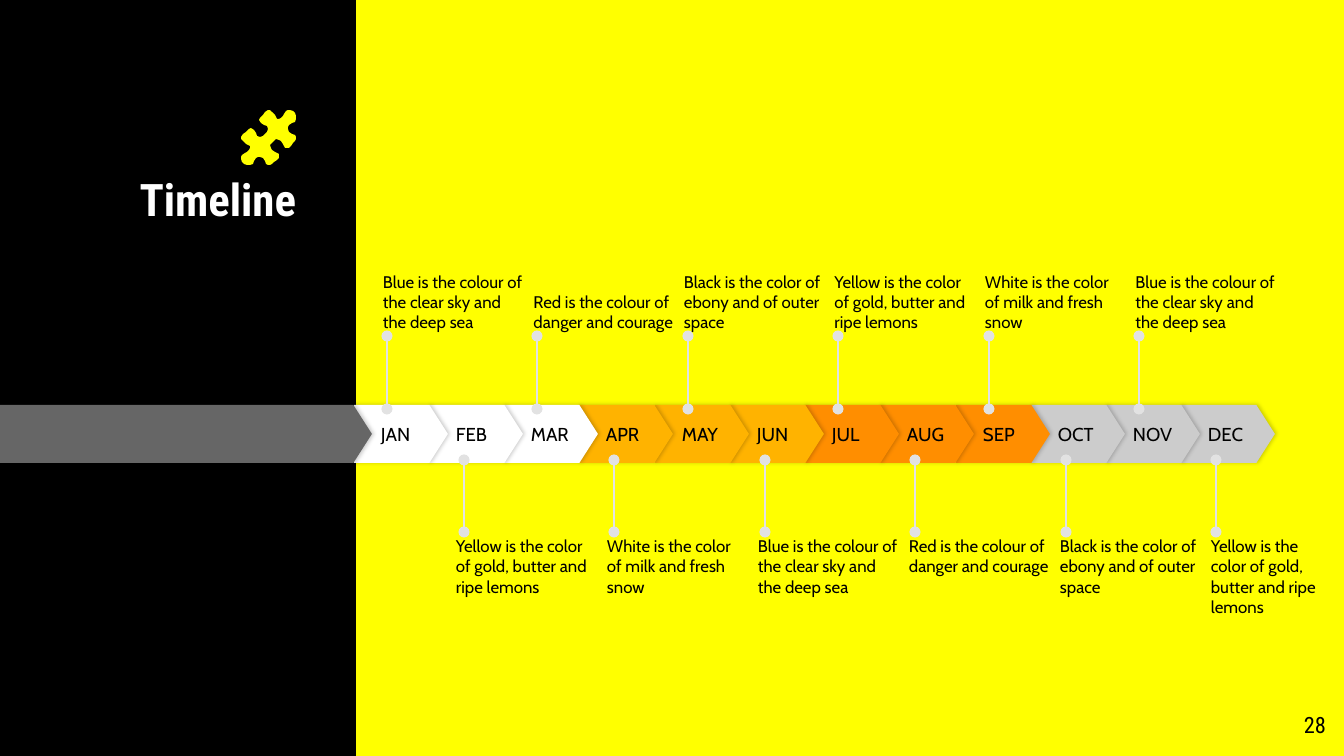
from lxml import etree
from pptx import Presentation
from pptx.dml.color import RGBColor
from pptx.enum.shapes import MSO_CONNECTOR, MSO_SHAPE
from pptx.enum.text import MSO_ANCHOR, PP_ALIGN
from pptx.oxml.ns import qn
from pptx.util import Pt

RECT, PLATE = MSO_SHAPE.RECTANGLE, MSO_SHAPE.PENTAGON
LINE = MSO_CONNECTOR.STRAIGHT
TOP, MID, LOW = MSO_ANCHOR.TOP, MSO_ANCHOR.MIDDLE, MSO_ANCHOR.BOTTOM
LEFT, RIGHT = PP_ALIGN.LEFT, PP_ALIGN.RIGHT
PX = 914400 / 134.4

THEME = {
    "back": "FFFF00", "side": "000000", "bar": "666666", "pin": "E2E2E2",
    "ink": "000000", "title": "FFFFFF",
    "terms": ["FFFFFF", "FFB300", "FF8E00", "CCCCCC"],
    "head": "Roboto Condensed", "body": "Cabin",
    "big": 24, "page": 12, "month": 10, "note": 9,
}


def px(*nums):
    return [round(n * PX) for n in nums]


def write(shape, text, size, font, ink=THEME["ink"], pad=(0, 0), anchor=TOP, align=LEFT):
    frame = shape.text_frame
    frame.text = text
    frame.word_wrap = True
    frame.vertical_anchor = anchor
    frame.margin_left, frame.margin_top = px(*pad)
    frame.margin_right = frame.margin_bottom = px(pad[1])[0]
    para = frame.paragraphs[0]
    para.alignment = align
    face = para.runs[0].font
    face.size, face.name = Pt(size), font
    face.color.rgb = RGBColor.from_string(ink)
    return para


deck = Presentation()
deck.slide_width, deck.slide_height = px(1344, 756)
slide = deck.slides.add_slide(deck.slide_layouts[6])
shapes = slide.shapes

# Background and side panel
slide.background.fill.solid()
slide.background.fill.fore_color.rgb = RGBColor.from_string(THEME["back"])
side = shapes.add_shape(RECT, *px(0, 0, 356, 756))
side.shadow.inherit = False
side.fill.solid()
side.fill.fore_color.rgb = RGBColor.from_string(THEME["side"])
side.line.fill.background()

# Title and page number
title = shapes.add_textbox(*px(59, 165, 250, 218))
para = write(title, "Timeline", THEME["big"], THEME["head"], THEME["title"], (13, 13), align=RIGHT)
para.line_spacing = 0.9
para.runs[0].font.bold = True
page = shapes.add_textbox(*px(1258, 698, 81, 58))
write(page, "28", THEME["page"], THEME["head"], pad=(13, 13), align=RIGHT)

# Month arrows, last one at the back, then the lead-in bar
months = ["JAN", "FEB", "MAR", "APR", "MAY", "JUN",
          "JUL", "AUG", "SEP", "OCT", "NOV", "DEC"]
plates = [(354 + 301 * i // 4, 94, THEME["terms"][i // 3], month)
          for i, month in enumerate(months)]
plates.insert(0, (0, 372, THEME["bar"], ""))
plates = plates[:0:-1] + plates[:1]
for left, width, fill, month in plates:
    plate = shapes.add_shape(PLATE, *px(left, 405, width, 58))
    plate.adjustments[0] = 0.32
    plate.fill.solid()
    plate.fill.fore_color.rgb = RGBColor.from_string(fill)
    plate.line.fill.background()
    plate.shadow.inherit = False
    effect = plate._element.spPr.find(qn("a:effectLst"))
    shade = etree.SubElement(effect, qn("a:outerShdw"), blurRad=str(Pt(2.2)),
                             dist=str(Pt(0.8)), dir="0", algn="bl", rotWithShape="0")
    tint = etree.SubElement(shade, qn("a:srgbClr"), val="000000")
    etree.SubElement(tint, qn("a:alpha"), val="20000")
    if month:
        write(plate, month, THEME["month"], THEME["body"], pad=(27, 0), anchor=MID)

# Notes with pins, above and below the arrows
blue = "Blue is the colour of the clear sky and the deep sea"
red = "Red is the colour of danger and courage"
black = "Black is the color of ebony and of outer space"
gold = "Yellow is the color of gold, butter and ripe lemons"
white = "White is the color of milk and fresh snow"
rows = [
    # notes, pin left, pin start, pin end, note left, note step, note top, anchor
    ([blue, red, black, gold, white, blue], 387, 409, 336, 383, 150.5, 254, LOW),
    ([gold, white, blue, red, black, gold], 464, 532, 460, 456, 151, 536, TOP),
]
for notes, pin, start, end, left, step, top, anchor in rows:
    for i, text in enumerate(notes):
        x = pin + 301 * i // 2
        line = shapes.add_connector(LINE, *px(x, start, x, end))
        line.line.color.rgb = RGBColor.from_string(THEME["pin"])
        line.line.width = Pt(0.75)
        stroke = line.line._get_or_add_ln()
        for tip in ("a:headEnd", "a:tailEnd"):
            etree.SubElement(stroke, qn(tip), type="oval", w="med", len="med")
        etree.SubElement(line._element.spPr, qn("a:effectLst"))
        width = 118 if anchor == TOP and i == 5 else 142
        note = shapes.add_textbox(*px(left + step * i, top, width, 78))
        write(note, text, THEME["note"], THEME["body"], anchor=anchor)

# Puzzle piece, mirrored across its diagonal
half = [
    (24, 24), (26, 22), (27, 19), (26, 16), (23, 15), (20, 13), (18, 10),
    (19, 8), (22, 5), (24, 2), (27, 0), (29, 0), (32, 3), (34, 5), (36, 9),
    (38, 9), (40, 8), (42, 6), (43, 4), (45, 1), (47, 0), (49, 0), (52, 1),
    (54, 3), (55, 6), (55, 9), (54, 12), (51, 13), (48, 15), (47, 17),
    (47, 19), (48, 22), (51, 24), (54, 25), (55, 27), (55, 29), (54, 31),
    (52, 33), (50, 36), (48, 38), (44, 38), (43, 36), (42, 34), (40, 31),
    (38, 30), (35, 29), (33, 31), (32, 32),
]
ring = half + [(y, x) for x, y in half[-2:0:-1]]
pen = shapes.build_freeform(*ring[0], scale=PX)
pen.add_line_segments(ring[1:], close=True)
piece = pen.convert_to_shape(*px(241, 110))
piece.shadow.inherit = False
piece.fill.solid()
piece.fill.fore_color.rgb = RGBColor.from_string(THEME["back"])
piece.line.fill.background()

deck.save("out.pptx")
